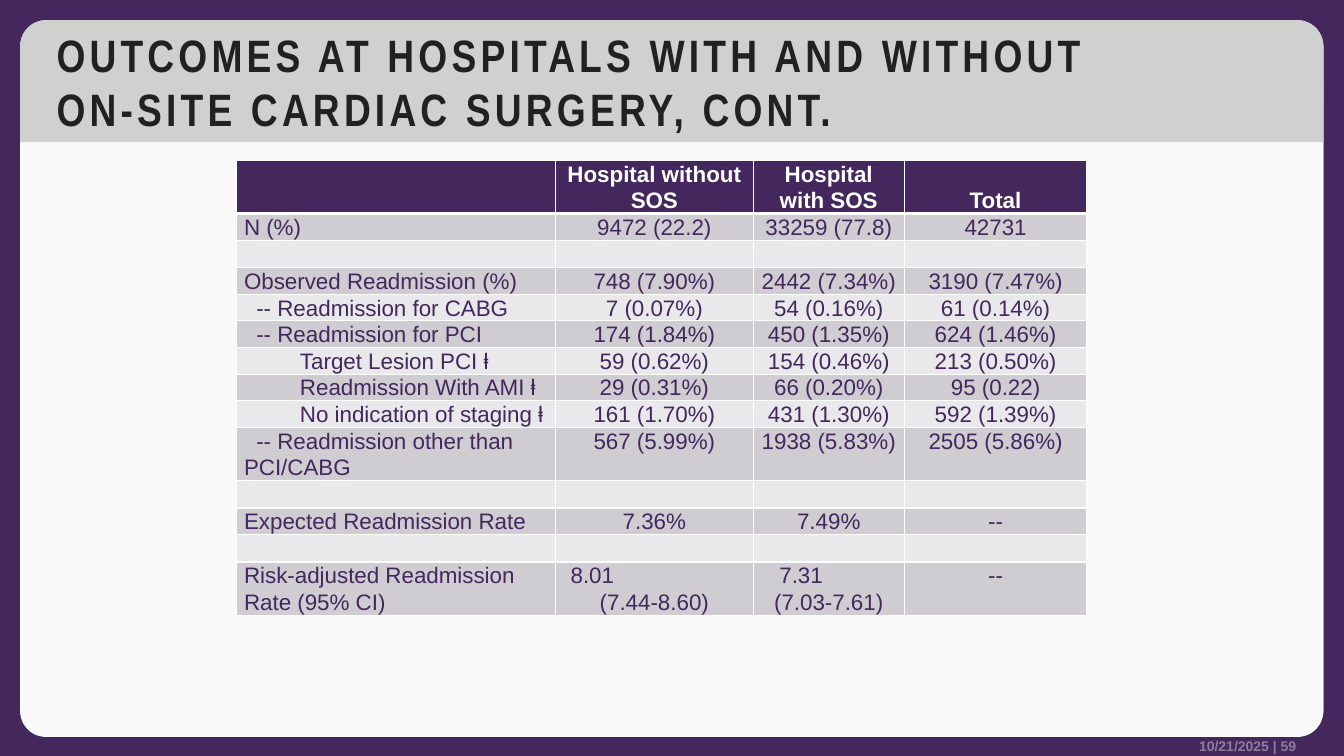
from lxml.etree import SubElement
from pptx import Presentation
from pptx.dml.color import RGBColor
from pptx.enum.shapes import MSO_SHAPE as SHAPE
from pptx.enum.text import MSO_ANCHOR as ANCHOR, PP_ALIGN as ALIGN
from pptx.oxml.ns import qn
from pptx.util import Cm, Pt

COLORS = {
    "purple": "43275D", "white": "FFFFFF", "card": "F9F9F9", "band": "D0D0CE",
    "title": "212121", "footer": "8B7FA0", "dark_row": "CFCDD2", "light_row": "E9E8EA",
}
COL_WIDTHS = [8.03, 4.98, 3.81, 4.6]
LINE_HEIGHT = 0.67
SUB, DETAIL = 0.31, 1.41  # first-line indents of the row labels, in cm

HEADER = ["", "Hospital without\vSOS", "Hospital\vwith SOS", "Total"]
BLANK = (0, ["", "", "", ""])
ROWS = [
    (0, ["N (%)", "9472 (22.2)", "33259 (77.8)", "42731"]),
    BLANK,
    (0, ["Observed Readmission (%)", "748 (7.90%)", "2442 (7.34%)", "3190 (7.47%)"]),
    (SUB, ["-- Readmission for CABG", "7 (0.07%)", "54 (0.16%)", "61 (0.14%)"]),
    (SUB, ["-- Readmission for PCI", "174 (1.84%)", "450 (1.35%)", "624 (1.46%)"]),
    (DETAIL, ["Target Lesion PCI ⱡ", "59 (0.62%)", "154 (0.46%)", "213 (0.50%)"]),
    (DETAIL, ["Readmission With AMI ⱡ", "29 (0.31%)", "66 (0.20%)", "95 (0.22)"]),
    (DETAIL, ["No indication of staging ⱡ", "161 (1.70%)", "431 (1.30%)", "592 (1.39%)"]),
    (SUB, ["-- Readmission other than PCI/CABG", "567 (5.99%)", "1938 (5.83%)",
           "2505 (5.86%)"]),
    BLANK,
    (0, ["Expected Readmission Rate", "7.36%", "7.49%", "--"]),
    BLANK,
    (0, ["Risk-adjusted Readmission Rate (95% CI)", "", "", "--"]),
]
RISK_ADJUSTED = [("8.01", "(7.44-8.60)", 0.2), ("7.31", "(7.03-7.61)", 0.48)]
TWO_LINE_ROWS = {0, 9, 13}


def rgb(name):
    return RGBColor.from_string(COLORS[name])


def write(p, text, size=16, color="purple", bold=False, font="Arial",
          align=ALIGN.LEFT, indent=0, line=None, spacing=0):
    """Fill a paragraph with one format; lines are split at a vertical tab."""
    p.alignment = align
    if line:
        p.line_spacing = line
    if indent:
        p._p.get_or_add_pPr().set("indent", str(Cm(indent)))
    for i, part in enumerate(text.split("\v")):
        if i:
            p.add_line_break()
        if not part:
            SubElement(p._p, qn("a:endParaRPr"), sz=str(size * 100))
            continue
        r = p.add_run()
        r.text = part
        r.font.size, r.font.bold, r.font.name = Pt(size), bold, font
        r.font.color.rgb = rgb(color)
        if spacing:
            r._r.get_or_add_rPr().set("spc", str(spacing * 100))


def set_borders(cell, top=1, bottom=1):
    tc_pr = cell._tc.get_or_add_tcPr()
    for side, width in (("L", 1), ("R", 1), ("T", top), ("B", bottom)):
        ln = SubElement(tc_pr, qn(f"a:ln{side}"), w=str(Pt(width)))
        fill = SubElement(ln, qn("a:solidFill"))
        SubElement(fill, qn("a:srgbClr"), val=COLORS["white"])


def add_panel(slide, kind, box, color, *adjustments):
    sp = slide.shapes.add_shape(kind, *map(Cm, box))
    sp.shadow.inherit = False
    sp.fill.solid()
    sp.fill.fore_color.rgb = rgb(color)
    sp.line.fill.background()
    for i, value in enumerate(adjustments):
        sp.adjustments[i] = value


def add_backdrop(slide, x, y, w, h):
    slide.background.fill.solid()
    slide.background.fill.fore_color.rgb = rgb("purple")
    for dy, color in ((0.03, "white"), (0, "card")):
        add_panel(slide, SHAPE.ROUNDED_RECTANGLE, (x, y + dy, w, h), color, 0.036)
    for dy in (0.99, 0):
        add_panel(slide, SHAPE.ROUND_2_SAME_RECTANGLE, (x, y + dy, w, 2.08),
                  "band", 0.315, 0)


def add_footer(slide, x, y, w, h):
    tf = slide.shapes.add_textbox(*map(Cm, (x, y, w, h))).text_frame
    tf.word_wrap = True
    tf.vertical_anchor = ANCHOR.BOTTOM
    tf.margin_left = tf.margin_right = tf.margin_top = tf.margin_bottom = 0
    write(tf.paragraphs[0], "10/21/2025 | 59 ", size=10, color="footer", bold=True,
          align=ALIGN.RIGHT)


def place_title(slide, x, y, w, h):
    """Format the title placeholder and bring it in front of the backdrop."""
    sp = slide.shapes.title
    sp.left, sp.top, sp.width, sp.height = map(Cm, (x, y, w, h))
    sp._element.getparent().append(sp._element)
    tf = sp.text_frame
    tf.word_wrap = True
    tf.vertical_anchor = ANCHOR.MIDDLE
    write(tf.paragraphs[0],
          "OUTCOMES AT HOSPITALS WITH AND WITHOUT\vON-SITE CARDIAC SURGERY, CONT.",
          size=32.4, color="title", bold=True, font="Arial Narrow", spacing=3)


def style_cell(cell, fill, **borders):
    set_borders(cell, **borders)
    cell.fill.solid()
    cell.fill.fore_color.rgb = rgb(fill)
    cell.margin_left = cell.margin_right = Cm(0.18)
    cell.margin_top = cell.margin_bottom = 0


def add_outcomes_table(slide, x, y):
    heights = [LINE_HEIGHT * (2 if i in TWO_LINE_ROWS else 1) for i in range(len(ROWS) + 1)]
    box = (x, y, sum(COL_WIDTHS), sum(heights))
    table = slide.shapes.add_table(len(heights), len(COL_WIDTHS), *map(Cm, box)).table
    for col, width in zip(table.columns, COL_WIDTHS):
        col.width = Cm(width)
    for row, height in zip(table.rows, heights):
        row.height = Cm(height)

    for c, text in enumerate(HEADER):
        cell = table.cell(0, c)
        style_cell(cell, "purple", bottom=3)
        cell.vertical_anchor = ANCHOR.BOTTOM
        write(cell.text_frame.paragraphs[0], text, color="white", bold=True,
              align=ALIGN.CENTER, line=1.07)

    for n, (indent, texts) in enumerate(ROWS, 1):
        for c, text in enumerate(texts):
            cell = table.cell(n, c)
            style_cell(cell, "dark_row" if n % 2 else "light_row", top=3 if n == 1 else 1)
            p = cell.text_frame.paragraphs[0]
            if n == len(ROWS) and not text:
                rate, interval, rate_indent = RISK_ADJUSTED[c - 1]
                write(p, rate, indent=rate_indent, line=1.07)
                write(cell.text_frame.add_paragraph(), interval, align=ALIGN.CENTER, line=1.07)
            elif c:
                write(p, text, align=ALIGN.CENTER, line=1.07)
            else:
                write(p, text, indent=indent, line=1.07)


def main():
    prs = Presentation()
    prs.slide_width, prs.slide_height = Cm(33.87), Cm(19.05)
    slide = prs.slides.add_slide(prs.slide_layouts[5])
    add_backdrop(slide, 0.51, 0.51, 32.84, 18.03)
    add_footer(slide, 20.8, 18.57, 11.96, 0.43)
    place_title(slide, 1.17, 0.51, 31.6, 3.07)
    add_outcomes_table(slide, 5.97, 4.04)
    prs.save("out.pptx")


if __name__ == "__main__":
    main()
